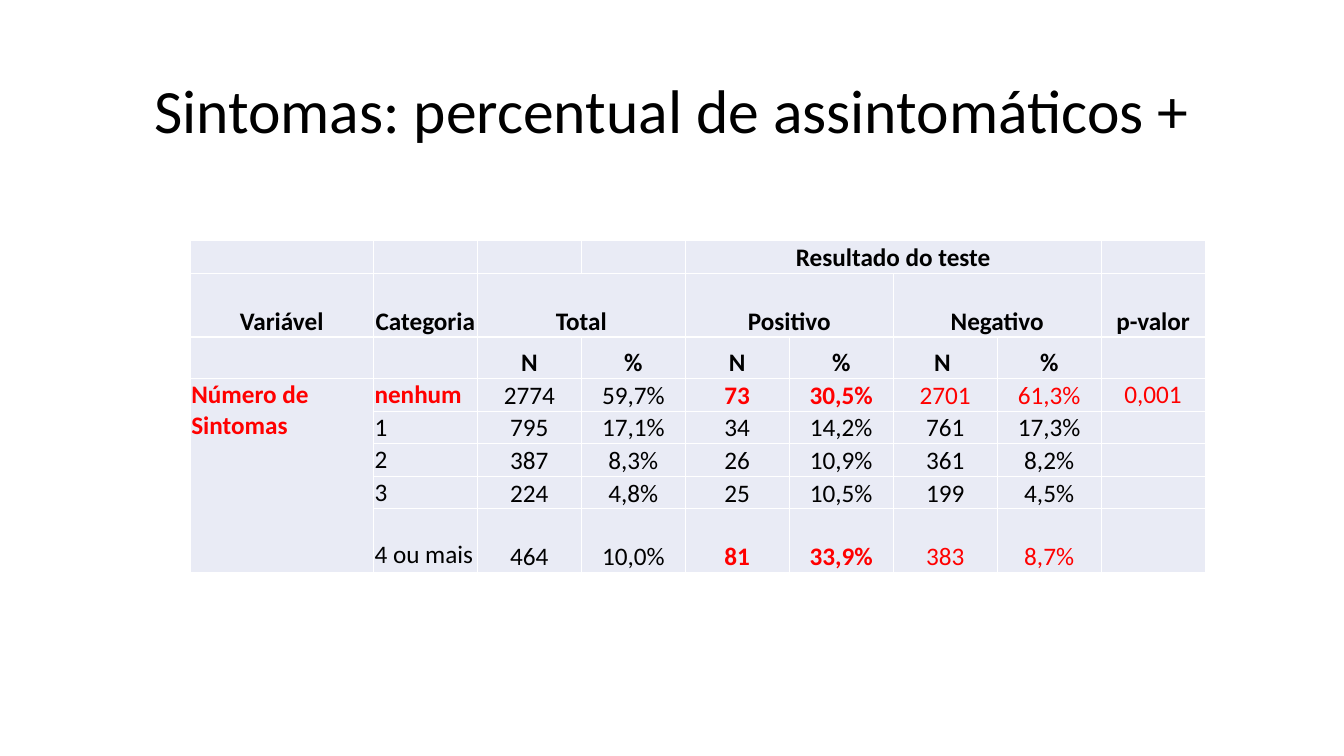
from lxml.etree import SubElement
from pptx import Presentation
from pptx.dml.color import RGBColor
from pptx.enum.text import MSO_ANCHOR, PP_ALIGN
from pptx.oxml.ns import qn
from pptx.util import Cm, Pt

FONT = "Calibri"
BLACK, RED, WHITE, PALE = "000000", "FF0000", "FFFFFF", "E9EBF5"
HEAD = 3
WIDTHS = [4.62] + [2.62] * 8
HEIGHTS = [0.82, 1.6, 1.05, 0.82, 0.82, 0.82, 0.82, 1.6]
ROWS = [
    ["", "", "", "", "Resultado do teste", "", "", "", ""],
    ["Variável", "Categoria", "Total", "", "Positivo", "", "Negativo", "", "p-valor"],
    ["", "", "N", "%", "N", "%", "N ", "%", ""],
    ["Número de Sintomas", "nenhum", "2774", "59,7%", "73", "30,5%", "2701", "61,3%", "0,001"],
    ["", "1", "795", "17,1%", "34", "14,2%", "761", "17,3%", ""],
    ["", "2", "387", "8,3%", "26", "10,9%", "361", "8,2%", ""],
    ["", "3", "224", "4,8%", "25", "10,5%", "199", "4,5%", ""],
    ["", "4 ou mais", "464", "10,0%", "81", "33,9%", "383", "8,7%", ""],
]
SPANS = [(0, 4, 0, 7), (1, 2, 1, 3), (1, 4, 1, 5), (1, 6, 1, 7), (3, 0, 7, 0)]


def paint(text):
    """Turn a hex string into a colour."""
    return RGBColor.from_string(text)


def style(para, size, color, bold, align):
    """Set the font and alignment of a paragraph."""
    para.alignment = align
    font = para.font
    font.name, font.size, font.bold = FONT, Pt(size), bold
    font.color.rgb = paint(color)


def border(cell):
    """Draw a thin white line on all four sides of a cell."""
    props = cell._tc.get_or_add_tcPr()
    for side in ("lnL", "lnR", "lnT", "lnB"):
        line = SubElement(props, qn(f"a:{side}"), w=str(Pt(1)))
        fill = SubElement(line, qn("a:solidFill"))
        SubElement(fill, qn("a:srgbClr"), val=WHITE)


def fill_cell(cell, text, row, col):
    """Write and format one cell according to its place in the table."""
    body = row >= HEAD
    last = row == len(ROWS) - 1
    red = (row == HEAD and col < 2) or (body and (row == HEAD or last) and col > 3)
    bold = not body or (red and col < 6)
    left = body and col < 2
    high = body and col in (0, 1, 8) and not (last and col == 1)
    border(cell)
    cell.fill.solid()
    cell.fill.fore_color.rgb = paint(PALE)
    cell.margin_left = cell.margin_right = cell.margin_top = Cm(0.03)
    cell.margin_bottom = Cm(0.05) if last and left else 0
    cell.vertical_anchor = MSO_ANCHOR.TOP if high else MSO_ANCHOR.BOTTOM
    cell.text = text
    style(cell.text_frame.paragraphs[0], 18, RED if red else BLACK, bold,
          PP_ALIGN.LEFT if left else PP_ALIGN.CENTER)


def add_grid(slide, left, top):
    """Place the table of symptoms by test result."""
    frame = slide.shapes.add_table(len(ROWS), len(WIDTHS), Cm(left), Cm(top),
                                   Cm(sum(WIDTHS)), Cm(sum(HEIGHTS)))
    table = frame.table
    table.first_row = table.horz_banding = False
    for col, width in zip(table.columns, WIDTHS):
        col.width = Cm(width)
    for row, height in zip(table.rows, HEIGHTS):
        row.height = Cm(height)
    for row, texts in enumerate(ROWS):
        for col, text in enumerate(texts):
            fill_cell(table.cell(row, col), text, row, col)
    for top_row, first, end_row, end in SPANS:
        table.cell(top_row, first).merge(table.cell(end_row, end))


def add_title(slide, left, top, width, height):
    """Place and format the slide title."""
    title = slide.shapes.title
    title.left, title.top = Cm(left), Cm(top)
    title.width, title.height = Cm(width), Cm(height)
    frame = title.text_frame
    frame.text = "Sintomas: percentual de assintomáticos +"
    frame.vertical_anchor = MSO_ANCHOR.MIDDLE
    para = frame.paragraphs[0]
    para.line_spacing = 0.9
    style(para, 44, BLACK, False, PP_ALIGN.CENTER)


def main():
    """Build the slide and save it."""
    deck = Presentation()
    deck.slide_width, deck.slide_height = Cm(33.87), Cm(19.05)
    slide = deck.slides.add_slide(deck.slide_layouts[5])
    add_title(slide, 2.33, 1.01, 29.21, 3.68)
    add_grid(slide, 4.79, 6.07)
    deck.save("out.pptx")


if __name__ == "__main__":
    main()
